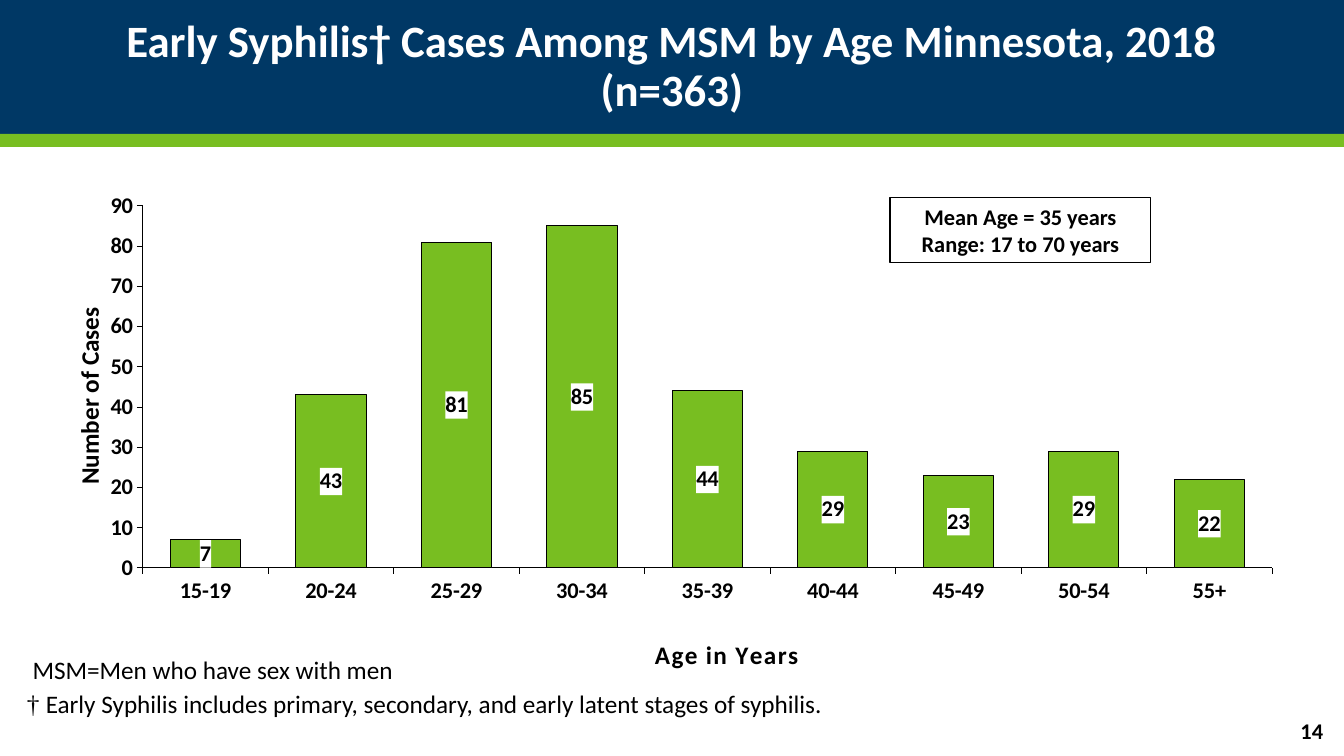
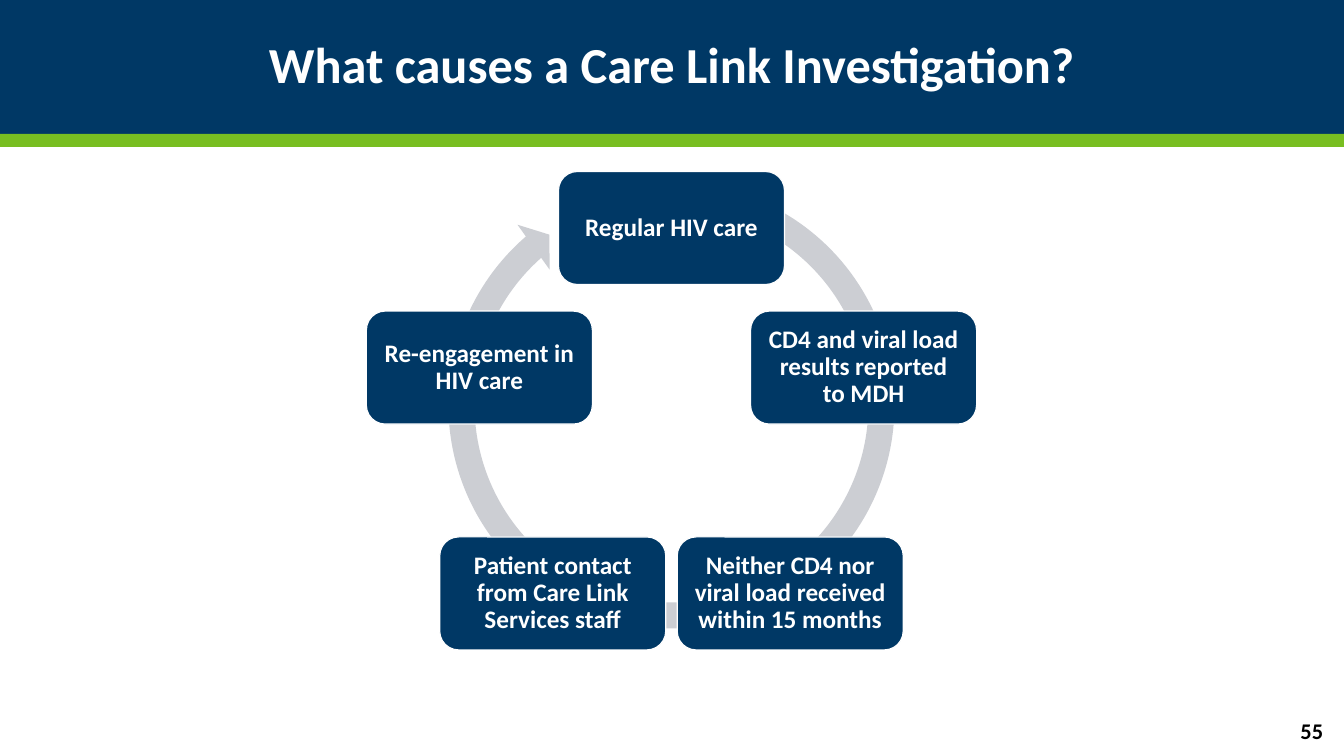
from math import cos, radians, sin

from lxml import etree
from pptx import Presentation
from pptx.chart.data import CategoryChartData
from pptx.dml.color import RGBColor
from pptx.enum.chart import XL_CHART_TYPE, XL_LABEL_POSITION, XL_TICK_MARK
from pptx.enum.shapes import MSO_SHAPE
from pptx.enum.text import MSO_ANCHOR, PP_ALIGN
from pptx.oxml import parse_xml
from pptx.oxml.ns import nsdecls, qn
from pptx.util import Pt

PAGE_W, PAGE_H = 1344, 756
SCALE = 12192000 / PAGE_W

NAVY, GREEN, GREY = "003865", "78BE21", "CCCED3"
BLACK, WHITE = "000000", "FFFFFF"
FONT = "Calibri"

RECT, ROUNDED, CYCLE_ARROW = (
    MSO_SHAPE.RECTANGLE, MSO_SHAPE.ROUNDED_RECTANGLE, MSO_SHAPE.CIRCULAR_ARROW)
LEFT, CENTER, RIGHT = PP_ALIGN.LEFT, PP_ALIGN.CENTER, PP_ALIGN.RIGHT
TOP, MIDDLE = MSO_ANCHOR.TOP, MSO_ANCHOR.MIDDLE
STACKED = XL_CHART_TYPE.COLUMN_STACKED
LABEL_CENTER = XL_LABEL_POSITION.CENTER
TICK_OUT, TICK_NONE = XL_TICK_MARK.OUTSIDE, XL_TICK_MARK.NONE


def px(length):
    return round(length * SCALE)


def place(box):
    return [px(length) for length in box]


def color(value):
    return RGBColor.from_string(value)


def style_font(font, size, value=BLACK, bold=True):
    font.name = FONT
    font.size = Pt(size)
    font.bold = bold
    font.color.rgb = color(value)


def style_line(line, value, width):
    line.color.rgb = color(value)
    line.width = Pt(width)


def write(shape, lines, size, value=BLACK, bold=True, align=CENTER,
          anchor=MIDDLE, spacing=1.0, before=0):
    frame = shape.text_frame
    frame.word_wrap = True
    frame.vertical_anchor = anchor
    for index, line in enumerate(lines):
        para = frame.add_paragraph() if index else frame.paragraphs[0]
        para.alignment = align
        para.line_spacing = spacing
        para.space_before = Pt(before)
        style_font(para.font, size, value, bold)
        for text, name in line if isinstance(line, list) else [(line, None)]:
            span = para.add_run()
            span.text = text
            if name:
                span.font.name = name
    return frame


def add_text(page, box, lines, size, **style):
    return write(page.shapes.add_textbox(*place(box)), lines, size, **style)


def add_block(page, kind, box, fill=None, line=None, width=0.75):
    shape = page.shapes.add_shape(kind, *place(box))
    shape.shadow.inherit = False
    if fill:
        shape.fill.solid()
        shape.fill.fore_color.rgb = color(fill)
    else:
        shape.fill.background()
    if line:
        style_line(shape.line, line, width)
    else:
        shape.line.fill.background()
    return shape


def add_page(deck, title, title_size, number):
    page = deck.slides.add_slide(deck.slide_layouts[6])
    add_block(page, RECT, (0, 0, PAGE_W, 134), NAVY)
    add_block(page, RECT, (0, 134, PAGE_W, 13), GREEN)
    add_text(page, (92, 17, 1160, 101), [title], title_size, value=WHITE, spacing=0.9)
    add_text(page, (1172, 711, 161, 40), [str(number)], 16, align=RIGHT)
    return page


def set_layout(element, inner=False, **fractions):
    layout = element.find(qn("c:layout"))
    if layout is None:
        layout = parse_xml(f"<c:layout {nsdecls('c')}/>")
        element.insert(0 if element.find(qn("c:tx")) is None else 1, layout)
    manual = etree.SubElement(layout, qn("c:manualLayout"))
    settings = {"layoutTarget": "inner"} if inner else {}
    settings.update(xMode="edge", yMode="edge", **fractions)
    for tag, value in settings.items():
        etree.SubElement(manual, qn(f"c:{tag}")).set("val", str(value))


def style_axis(axis, title, x, y):
    axis.has_major_gridlines = False
    axis.major_tick_mark = TICK_OUT
    axis.minor_tick_mark = TICK_NONE
    style_font(axis.tick_labels.font, 16)
    style_line(axis.format.line, BLACK, 0.75)
    para = axis.axis_title.text_frame.paragraphs[0]
    para.text = title
    style_font(para.runs[0].font, 18)
    set_layout(axis.axis_title._element, x=x, y=y)


def add_age_chart(page, box, cases):
    data = CategoryChartData()
    data.categories = list(cases)
    data.add_series("Series 1", list(cases.values()))
    chart = page.shapes.add_chart(STACKED, *place(box), data).chart
    chart.has_legend = False
    chart.has_title = False
    style_font(chart.font, 16)
    set_layout(chart._chartSpace.chart.plotArea, inner=True,
               x=0.074, y=0.068, w=0.91, h=0.706)

    style_axis(chart.category_axis, "Age in Years", 0.483, 0.9)
    chart.category_axis._element.find(".//" + qn("a:defRPr")).set("spc", "100")
    style_axis(chart.value_axis, "Number of Cases", 0.013, 0.257)
    chart.value_axis.minimum_scale = 0
    chart.value_axis.maximum_scale = 90
    chart.value_axis.major_unit = 10

    plot = chart.plots[0]
    plot.gap_width = 79
    plot.overlap = 100
    plot.vary_by_categories = False
    bars = plot.series[0]
    bars.format.fill.solid()
    bars.format.fill.fore_color.rgb = color(GREEN)
    style_line(bars.format.line, BLACK, 0.75)
    labels = bars.data_labels
    labels.show_value = True
    labels.position = LABEL_CENTER
    style_font(labels.font, 16)
    labels._element.find(qn("c:txPr")).addprevious(parse_xml(
        f"<c:spPr {nsdecls('c', 'a')}><a:solidFill>"
        f'<a:srgbClr val="{WHITE}"/></a:solidFill></c:spPr>'))


def add_cycle(page, box, steps):
    left, top, width, height = box
    arrow = add_block(page, CYCLE_ARROW, (left, top, width, height), GREY)
    for index, value in enumerate((0.055, 3.307, 137.364, 174.101, 0.058)):
        arrow.adjustments[index] = value
    node_w, node_h, radius = 226, 113, 202
    center_x = left + width / 2
    center_y = top + 60 + radius
    for index, step in enumerate(steps):
        angle = radians(index * 360 / len(steps))
        x = center_x + radius * sin(angle) - node_w / 2
        y = center_y - radius * cos(angle) - node_h / 2
        node = add_block(page, ROUNDED, (x, y, node_w, node_h), NAVY, WHITE, 0.85)
        frame = write(node, [step], 18, value=WHITE, spacing=0.9)
        frame.margin_left = frame.margin_right = px(12)
        frame.margin_top = frame.margin_bottom = px(12)


def build_age_page(deck):
    page = add_page(
        deck, "Early Syphilis† Cases Among MSM by Age Minnesota, 2018 (n=363)", 32, 14)
    add_age_chart(page, (51, 171, 1241, 513), {
        "15-19": 7, "20-24": 43, "25-29": 81, "30-34": 85, "35-39": 44,
        "40-44": 29, "45-49": 23, "50-54": 29, "55+": 22})
    callout = add_block(page, RECT, (890, 198, 261, 65), line=BLACK)
    write(callout, ["Mean Age = 35 years", "Range: 17 to 70 years"], 16)
    add_text(page, (17, 658, 818, 69), [
        " MSM=Men who have sex with men",
        [("† ", "Times New Roman"),
         ("Early Syphilis includes primary, secondary, and early latent stages of syphilis.",
          None)],
    ], 18, bold=False, align=LEFT, anchor=TOP, spacing=0.7, before=9)


def build_cycle_page(deck):
    page = add_page(deck, "What causes a Care Link Investigation?", 36, 55)
    add_cycle(page, (434, 168, 475, 475), [
        "Regular HIV care",
        "CD4 and viral load results reported to MDH",
        "Neither CD4 nor viral load received within 15 months",
        "Patient contact from Care Link Services staff",
        "Re-engagement in HIV care"])


def main():
    deck = Presentation()
    deck.slide_width, deck.slide_height = px(PAGE_W), px(PAGE_H)
    build_age_page(deck)
    build_cycle_page(deck)
    deck.save("out.pptx")


if __name__ == "__main__":
    main()
